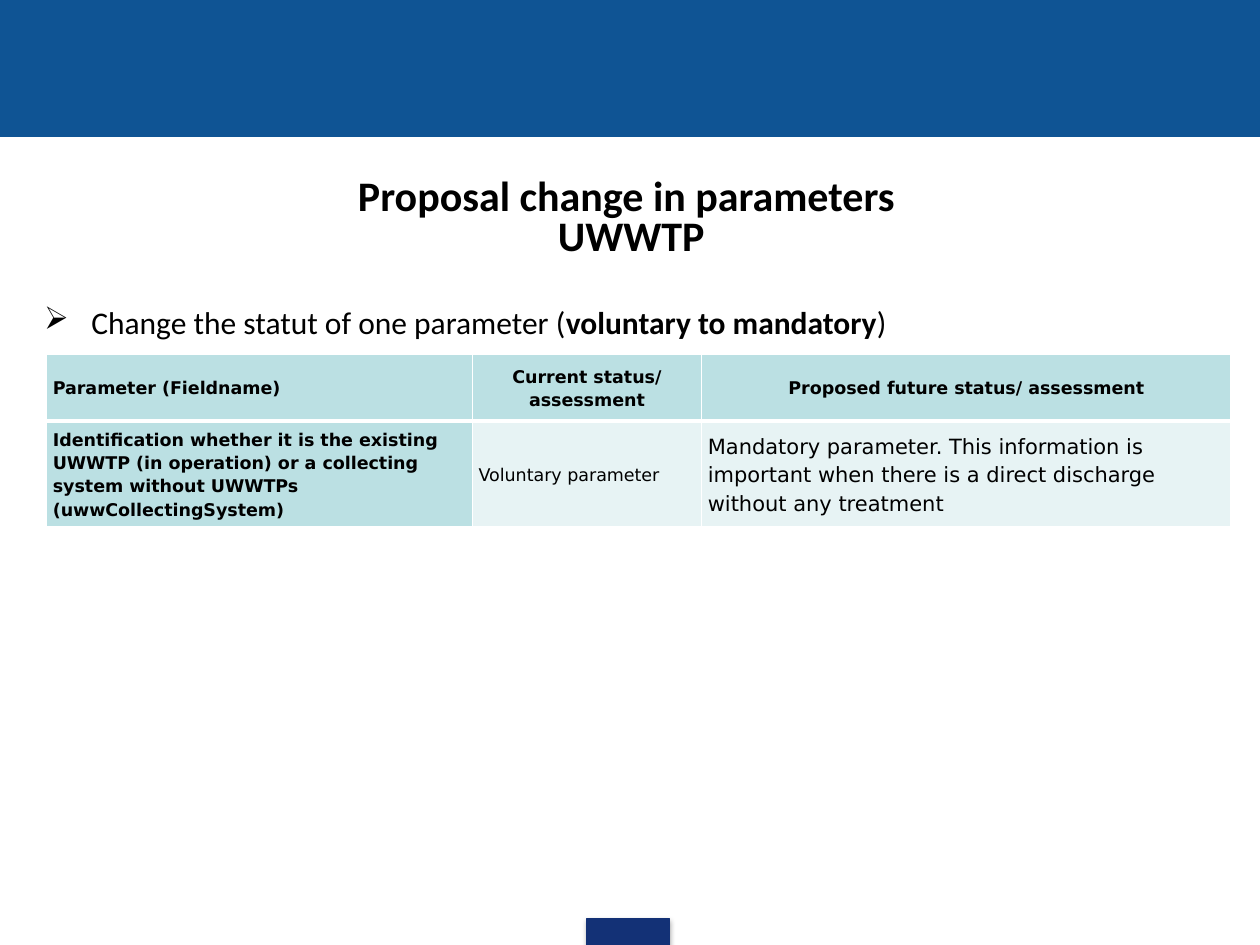
from dataclasses import dataclass

from lxml import etree
from pptx import Presentation
from pptx.dml.color import RGBColor
from pptx.enum import shapes, text
from pptx.oxml import ns
from pptx.util import Pt


@dataclass(frozen=True)
class Theme:
    banner: RGBColor = RGBColor(0x0F, 0x54, 0x94)
    marker: RGBColor = RGBColor(0x13, 0x31, 0x76)
    ink: RGBColor = RGBColor(0, 0, 0)
    border: str = "FFFFFF"
    strong_cell: RGBColor = RGBColor(0xBB, 0xE0, 0xE3)
    light_cell: RGBColor = RGBColor(0xE7, 0xF3, 0xF4)
    text_font: str = "Calibri"
    table_font: str = "DejaVu Sans"
    title_size: int = 24
    bullet_size: int = 18
    cell_size: int = 10
    large_cell_size: int = 12


THEME = Theme()
CENTER, LEFT = text.PP_ALIGN.CENTER, text.PP_ALIGN.LEFT


def apply(target, values):
    for name, value in values.items():
        setattr(target, name, value)


def add_element(parent, tag, **attributes):
    return etree.SubElement(parent, ns.qn(tag), attributes)


def add_run(paragraph, wording, font, size, bold):
    run = paragraph.add_run()
    run.text = wording
    apply(run.font, {"name": font, "size": Pt(size), "bold": bold})
    run.font.color.rgb = THEME.ink


def add_bar(slide, box, color):
    bar = slide.shapes.add_shape(
        shapes.MSO_SHAPE.RECTANGLE, *(Pt(length) for length in box))
    bar.shadow.inherit = False
    bar.fill.solid()
    bar.fill.fore_color.rgb = color
    bar.line.color.rgb = color
    bar.line.width = Pt(0.75)
    return bar


def add_marker(slide, box):
    marker = add_bar(slide, box, THEME.marker)
    effects = marker._element.spPr.find(ns.qn("a:effectLst"))
    shadow = add_element(effects, "a:outerShdw", blurRad=str(Pt(3.1)),
                         dist=str(Pt(1.8)), dir="5400000", rotWithShape="0")
    black = add_element(shadow, "a:srgbClr", val="000000")
    add_element(black, "a:alpha", val="35000")


def add_heading(slide, box):
    frame = slide.shapes.add_textbox(*(Pt(length) for length in box)).text_frame
    apply(frame, {"word_wrap": True, "margin_left": Pt(6.5), "margin_right": Pt(6.5),
                  "margin_top": Pt(3), "margin_bottom": Pt(3)})

    # Two centred title lines, then the bullet
    title = [("Proposal change in parameters ", True)], CENTER, THEME.title_size, 19.5, 0
    subtitle = [("UWWTP", True)], CENTER, THEME.title_size, 19.5, 0
    bullet = ([("Change the statut of one parameter (", False),
               ("voluntary to mandatory", True), (")", False)],
              LEFT, THEME.bullet_size, 27, 30)
    for index, (runs, align, size, indent, gap) in enumerate((title, subtitle, bullet)):
        paragraph = frame.paragraphs[0] if index == 0 else frame.add_paragraph()
        apply(paragraph, {"alignment": align, "line_spacing": 0.78})
        if gap:
            paragraph.space_before = Pt(gap)
        properties = paragraph._p.get_or_add_pPr()
        properties.set("marL", str(Pt(indent)))
        properties.set("indent", str(-Pt(indent)))
        if align == LEFT:
            add_element(properties, "a:buChar", char="➢")
        for wording, bold in runs:
            add_run(paragraph, wording, THEME.text_font, size, bold)


def set_borders(cell, bottom_width):
    properties = cell._tc.get_or_add_tcPr()
    for side, width in (("L", 1), ("R", 1), ("T", 1), ("B", bottom_width)):
        line = add_element(properties, f"a:ln{side}", w=str(Pt(width)))
        fill = add_element(line, "a:solidFill")
        add_element(fill, "a:srgbClr", val=THEME.border)


def add_parameter_table(slide, box):
    rows = [
        ["Parameter (Fieldname)", "Current status/ assessment",
         "Proposed future status/ assessment"],
        ["Identification whether it is the existing UWWTP (in operation) or a collecting "
         "system without UWWTPs (uwwCollectingSystem)",
         "Voluntary parameter",
         "Mandatory parameter. This information is important when there is a direct "
         "discharge without any treatment"],
    ]
    frame = slide.shapes.add_table(2, 3, *(Pt(length) for length in box))
    table = frame.table
    for column, width in zip(table.columns, (243.3, 131, 302.5)):
        column.width = Pt(width)
    for row, height in zip(table.rows, (38.2, 60.4)):
        row.height = Pt(height)

    for row_index, row in enumerate(rows):
        for column_index, wording in enumerate(row):
            header = row_index == 0
            strong = header or column_index == 0
            large = not header and column_index == 2
            cell = table.cell(row_index, column_index)
            set_borders(cell, 3 if header else 1)
            apply(cell, {"margin_left": Pt(3.6), "margin_right": Pt(3.6),
                         "margin_top": 0, "margin_bottom": 0,
                         "vertical_anchor": text.MSO_ANCHOR.MIDDLE})
            cell.fill.solid()
            cell.fill.fore_color.rgb = THEME.strong_cell if strong else THEME.light_cell
            paragraph = cell.text_frame.paragraphs[0]
            apply(paragraph, {"alignment": CENTER if header and column_index else LEFT,
                              "line_spacing": 1.15})
            add_run(paragraph, wording, THEME.table_font,
                    THEME.large_cell_size if large else THEME.cell_size, strong)


def main():
    presentation = Presentation()
    apply(presentation, {"slide_width": Pt(720), "slide_height": Pt(540)})
    slide = presentation.slides.add_slide(presentation.slide_layouts[6])

    # Banner and footer marker
    add_bar(slide, (0, 0, 720, 78), THEME.banner)
    add_marker(slide, (335.5, 525, 47, 15.5))

    # Heading and table
    add_heading(slide, (18.7, 100, 684, 51))
    add_parameter_table(slide, (26.6, 202.3, 676.8, 98.6))
    presentation.save("out.pptx")


if __name__ == "__main__":
    main()
